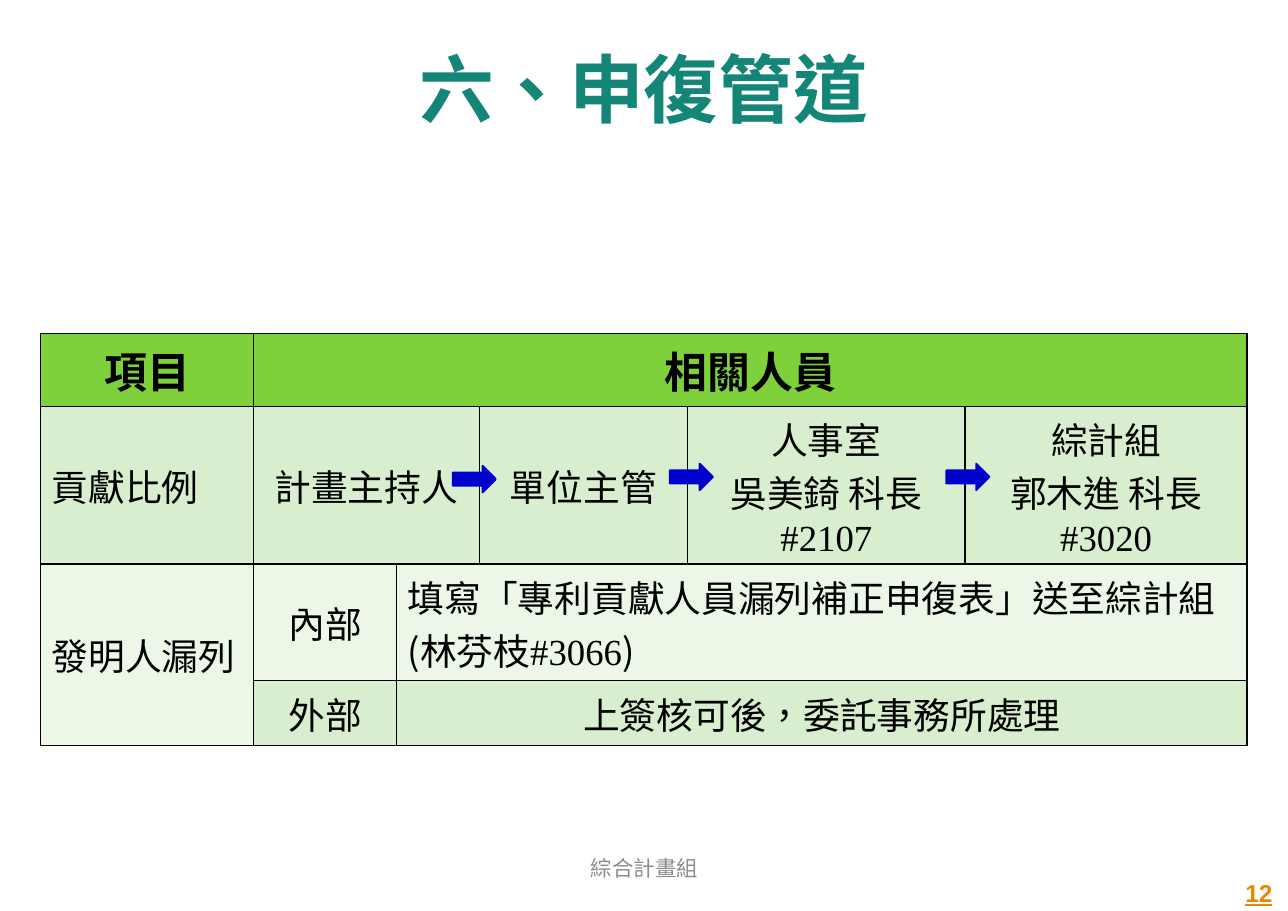
from lxml import etree
from pptx import Presentation
from pptx.dml.color import RGBColor
from pptx.enum.lang import MSO_LANGUAGE_ID
from pptx.enum.shapes import MSO_SHAPE
from pptx.enum.text import MSO_ANCHOR, PP_ALIGN
from pptx.oxml.ns import qn
from pptx.util import Emu, Pt

PX = 9144  # 100 px to the inch
LEFT, CENTER, RIGHT = PP_ALIGN.LEFT, PP_ALIGN.CENTER, PP_ALIGN.RIGHT
TOP, MIDDLE = MSO_ANCHOR.TOP, MSO_ANCHOR.MIDDLE
RIGHT_ARROW = MSO_SHAPE.RIGHT_ARROW
TAIWAN = MSO_LANGUAGE_ID.TRADITIONAL_CHINESE

BLACK = RGBColor(0x00, 0x00, 0x00)
TEAL = RGBColor(0x13, 0x86, 0x77)
ORANGE = RGBColor(0xEB, 0x88, 0x03)
GREY = RGBColor(0x8C, 0x8C, 0x8C)
GREEN = RGBColor(0x7F, 0xD1, 0x3B)
LIGHT = RGBColor(0xD8, 0xEE, 0xCE)
PALE = RGBColor(0xEC, 0xF7, 0xE8)
BLUE = RGBColor(0x00, 0x00, 0xCC)

CJK, SERIF, SANS = "Noto Sans CJK SC", "Times New Roman", "Arial"

COLUMNS = [193, 130, 75, 189, 252, 256]
ROWS = [66, 143, 106, 59]
# row, column, rows spanned, columns spanned, fill, alignment, paragraphs, font
CELLS = [
    (0, 0, 1, 1, GREEN, CENTER, ["項目"], CJK),
    (0, 1, 1, 5, GREEN, CENTER, ["相關人員"], CJK),
    (1, 0, 1, 1, LIGHT, LEFT, ["貢獻比例"], CJK),
    (1, 1, 1, 2, LIGHT, CENTER, ["計畫主持人"], CJK),
    (1, 3, 1, 1, LIGHT, CENTER, ["單位主管"], CJK),
    (1, 4, 1, 1, LIGHT, CENTER, ["人事室", "吳美錡 科長#2107"], SERIF),
    (1, 5, 1, 1, LIGHT, CENTER, ["綜計組", "郭木進 科長#3020"], SERIF),
    (2, 0, 2, 1, PALE, LEFT, ["發明人漏列"], CJK),
    (2, 1, 1, 1, PALE, CENTER, ["內部"], CJK),
    (2, 2, 1, 4, PALE, LEFT, ["填寫「專利貢獻人員漏列補正申復表」送至綜計組("], CJK),
    (3, 1, 1, 1, LIGHT, CENTER, ["外部"], CJK),
    (3, 2, 1, 4, LIGHT, CENTER, ["上簽核可後，委託事務所處理"], CJK),
]
ARROWS = [(411, 423), (608, 421), (859, 421)]


def px(n):
    return Emu(n * PX)


class Deck:
    """Holds the presentation, its current slide and the shared style."""

    def __init__(self, width, height):
        self.prs = Presentation()
        self.prs.slide_width, self.prs.slide_height = px(width), px(height)
        self.s = self.prs.slides.add_slide(self.prs.slide_layouts[6])

    def fill_paragraph(self, p, text, size, name, color, align,
                       bold=False, underline=False):
        p.alignment = align
        r = p.add_run()
        r.text = text
        r.font.language_id = TAIWAN
        f = p.font
        f.size, f.name, f.bold, f.underline = Pt(size), name, bold, underline
        f.color.rgb = color
        east_asian = etree.Element(qn("a:ea"), typeface=CJK)
        f._rPr.find(qn("a:latin")).addnext(east_asian)

    def text(self, box, text, size, name, color, align, anchor=MIDDLE, **style):
        tf = self.s.shapes.add_textbox(*map(px, box)).text_frame
        tf.word_wrap, tf.vertical_anchor = True, anchor
        tf.margin_left = tf.margin_right = px(11)
        tf.margin_top = tf.margin_bottom = px(6)
        self.fill_paragraph(tf.paragraphs[0], text, size, name, color, align, **style)

    def arrow(self, left, top):
        sp = self.s.shapes.add_shape(RIGHT_ARROW, *map(px, (left, top, 39, 24)))
        sp.shadow.inherit = False
        sp.fill.solid()
        sp.fill.fore_color.rgb = sp.line.color.rgb = BLUE
        sp.line.width = Pt(1.25)

    def table(self, left, top, columns, rows):
        box = map(px, (left, top, sum(columns), sum(rows)))
        tbl = self.s.shapes.add_table(len(rows), len(columns), *box).table
        tbl.first_row = tbl.horz_banding = False
        for column, width in zip(tbl.columns, columns):
            column.width = px(width)
        for row, height in zip(tbl.rows, rows):
            row.height = px(height)
        for cell in tbl.iter_cells():
            self.border(cell)
        return tbl

    def border(self, cell):
        tc_pr = cell._tc.get_or_add_tcPr()
        for side in ("a:lnL", "a:lnR", "a:lnT", "a:lnB"):
            ln = etree.SubElement(tc_pr, qn(side), w=str(Pt(1)))
            fill = etree.SubElement(ln, qn("a:solidFill"))
            etree.SubElement(fill, qn("a:srgbClr"), val=str(BLACK))

    def cell(self, tbl, row, col, height, width, fill, align, lines, name):
        cell = tbl.cell(row, col)
        if height * width > 1:
            cell.merge(tbl.cell(row + height - 1, col + width - 1))
        cell.fill.solid()
        cell.fill.fore_color.rgb = fill
        header = row == 0
        size = 28 if header else 24
        cell.vertical_anchor = TOP if header else MIDDLE
        tf = cell.text_frame
        for i, line in enumerate(lines):
            p = tf.add_paragraph() if i else tf.paragraphs[0]
            self.fill_paragraph(p, line, size, name, BLACK, align, bold=header)


def main():
    deck = Deck(1169, 827)
    deck.text((0, 23, 1169, 113), "六、申復管道", 48.8, CJK, TEAL, CENTER, bold=True)
    deck.text((893, 791, 273, 43), "12", 16, SANS, ORANGE, RIGHT, TOP,
              bold=True, underline=True)
    deck.text((400, 766, 370, 44), "綜合計畫組", 14, SERIF, GREY, CENTER)

    tbl = deck.table(37, 303, COLUMNS, ROWS)
    for cell in CELLS:
        deck.cell(tbl, *cell)
    p = tbl.cell(2, 2).text_frame.paragraphs[0]
    for text, name in (("林芬枝#3066", SERIF), (")", CJK)):
        r = p.add_run()
        r.text, r.font.name, r.font.language_id = text, name, TAIWAN

    for left, top in ARROWS:
        deck.arrow(left, top)
    deck.prs.save("out.pptx")


if __name__ == "__main__":
    main()
